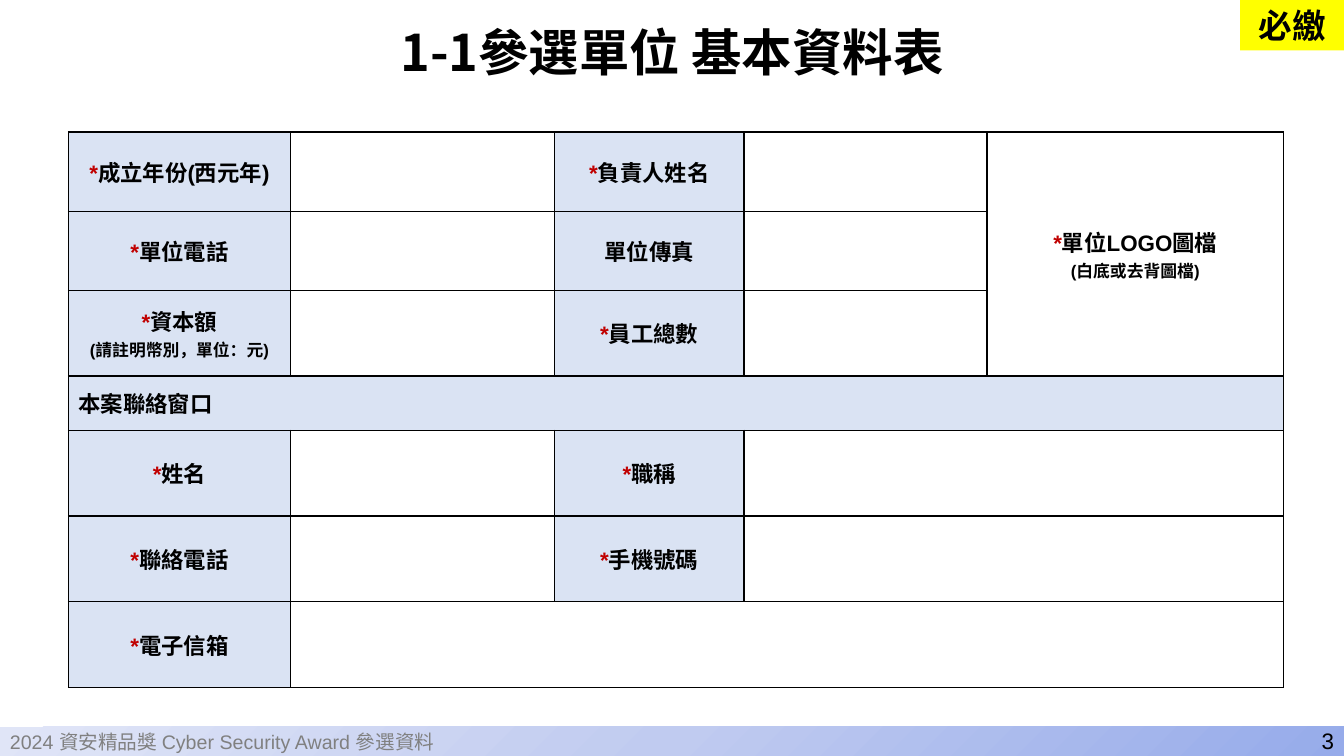
from lxml import etree
from pptx import Presentation
from pptx import util as u
from pptx.dml.color import RGBColor
from pptx.enum import shapes, text
from pptx.oxml import parse_xml
from pptx.oxml.ns import nsdecls, qn

LATIN, CJK = "Arial", "Noto Sans CJK SC"
LABEL, RED, BLACK = "DAE3F3", "C00000", "000000"
COLS = [2.2, 2.62, 1.88, 2.41, 2.94]
ROWS = [0.79, 0.78, 0.85, 0.54, 0.85, 0.85, 0.85]
LABELS = {
    (0, 0): "*成立年份(西元年)",
    (0, 2): "*負責人姓名",
    (0, 4): "*單位LOGO圖檔\n(白底或去背圖檔)",
    (1, 0): "*單位電話",
    (1, 2): "單位傳真",
    (2, 0): "*資本額\n(請註明幣別，單位：元)",
    (2, 2): "*員工總數",
    (3, 0): "本案聯絡窗口",
    (4, 0): "*姓名",
    (4, 2): "*職稱",
    (5, 0): "*聯絡電話",
    (5, 2): "*手機號碼",
    (6, 0): "*電子信箱",
}
MERGES = [((0, 4), (2, 4)), ((3, 0), (3, 4)), ((4, 3), (4, 4)),
          ((5, 3), (5, 4)), ((6, 1), (6, 4))]
LOGO, CONTACT = (0, 4), (3, 0)


def rgb(value):
    return RGBColor.from_string(value)


def add_run(p, words, size=16, color=BLACK, bold=False, font=LATIN, align=text.PP_ALIGN.CENTER):
    p.alignment = align
    r = p.add_run()
    r.text = words
    r.font.size = u.Pt(size)
    r.font.bold = bold
    r.font.name = font
    r.font.color.rgb = rgb(color)
    ea = etree.SubElement(r.font._element, qn("a:ea"))
    ea.set("typeface", CJK)


def add_rect(slide, box, fill=None):
    sp = slide.shapes.add_shape(shapes.MSO_SHAPE.RECTANGLE, *map(u.Inches, box))
    sp.shadow.inherit = False
    sp.line.fill.background()
    if fill:
        sp.fill.solid()
        sp.fill.fore_color.rgb = rgb(fill)
    else:
        sp.fill.background()
    sp.text_frame.word_wrap = True
    sp.text_frame.vertical_anchor = text.MSO_ANCHOR.MIDDLE
    return sp


def add_footer(slide, left, top, width, height):
    sp = add_rect(slide, (left, top, width, height))
    stops = "".join(
        f'<a:gs pos="{pos}000"><a:srgbClr val="{color}"/></a:gs>'
        for pos, color in [(0, "96ABEA"), (50, "C0CBF0"), (100, "E0E5F7")])
    gradient = parse_xml(
        f'<a:gradFill {nsdecls("a")}><a:gsLst>{stops}</a:gsLst><a:path path="circle">'
        '<a:fillToRect l="100000" t="100000"/></a:path></a:gradFill>')
    sp_pr = sp._element.spPr
    sp_pr.replace(sp_pr.find(qn("a:noFill")), gradient)
    add_run(sp.text_frame.paragraphs[0], "2024 資安精品獎 Cyber Security Award 參選資料",
            size=14, color="808080", align=text.PP_ALIGN.LEFT)

    number = slide.shapes.add_textbox(
        *map(u.Inches, (left + width - 0.76, top - 0.06, 0.76, 0.4)))
    tf = number.text_frame
    tf.word_wrap = True
    tf.vertical_anchor = text.MSO_ANCHOR.MIDDLE
    add_run(tf.paragraphs[0], "3", align=text.PP_ALIGN.RIGHT)


def add_borders(cell):
    tc_pr = cell._tc.get_or_add_tcPr()
    for i, side in enumerate(["lnL", "lnR", "lnT", "lnB"]):
        tc_pr.insert(i, parse_xml(
            f'<a:{side} {nsdecls("a")} w="12700"><a:solidFill>'
            f'<a:srgbClr val="{BLACK}"/></a:solidFill></a:{side}>'))


def fill_label(cell, words, align):
    cell.vertical_anchor = text.MSO_ANCHOR.MIDDLE
    tf = cell.text_frame
    for i, line in enumerate(words.split("\n")):
        p = tf.add_paragraph() if i else tf.paragraphs[0]
        if line.startswith("*"):
            add_run(p, "*", color=RED, bold=True, align=align)
        add_run(p, line.lstrip("*"), size=12 if i else 16, bold=True, align=align)


def add_form(slide, left, top):
    box = map(u.Inches, (left, top, sum(COLS), sum(ROWS)))
    table = slide.shapes.add_table(len(ROWS), len(COLS), *box).table
    table.first_row = table.horz_banding = False
    for column, width in zip(table.columns, COLS):
        column.width = u.Inches(width)
    for row, height in zip(table.rows, ROWS):
        row.height = u.Inches(height)
    for start, end in MERGES:
        table.cell(*start).merge(table.cell(*end))
    for r in range(len(ROWS)):
        for c in range(len(COLS)):
            cell = table.cell(r, c)
            is_label = (r, c) in LABELS and (r, c) != LOGO
            cell.fill.solid()
            cell.fill.fore_color.rgb = rgb(LABEL if is_label else "FFFFFF")
            add_borders(cell)
            if (r, c) in LABELS:
                align = text.PP_ALIGN.LEFT if (r, c) == CONTACT else text.PP_ALIGN.CENTER
                fill_label(cell, LABELS[r, c], align)


def add_badge(slide, left, top, width, height):
    sp = add_rect(slide, (left, top, width, height), "FFFF00")
    add_run(sp.text_frame.paragraphs[0], "必繳", size=24, bold=True, font=CJK)


def set_title(slide, left, top, width, height):
    title = slide.shapes.title
    title.left, title.top, title.width, title.height = map(u.Inches, (left, top, width, height))
    tf = title.text_frame
    tf.word_wrap = True
    tf.vertical_anchor = text.MSO_ANCHOR.MIDDLE
    p = tf.paragraphs[0]
    p.line_spacing = 0.9
    add_run(p, "1-1參選單位 基本資料表", size=36, bold=True, font=CJK)


def main():
    prs = Presentation()
    prs.slide_width, prs.slide_height = u.Inches(13.33), u.Inches(7.5)
    s = prs.slides.add_slide(prs.slide_layouts[5])
    set_title(s, 0, 0, 13.33, 1.09)
    add_footer(s, 0, 7.21, 13.33, 0.29)
    add_form(s, 0.68, 1.31)
    add_badge(s, 12.3, 0, 1.03, 0.5)
    prs.save("out.pptx")


if __name__ == "__main__":
    main()
